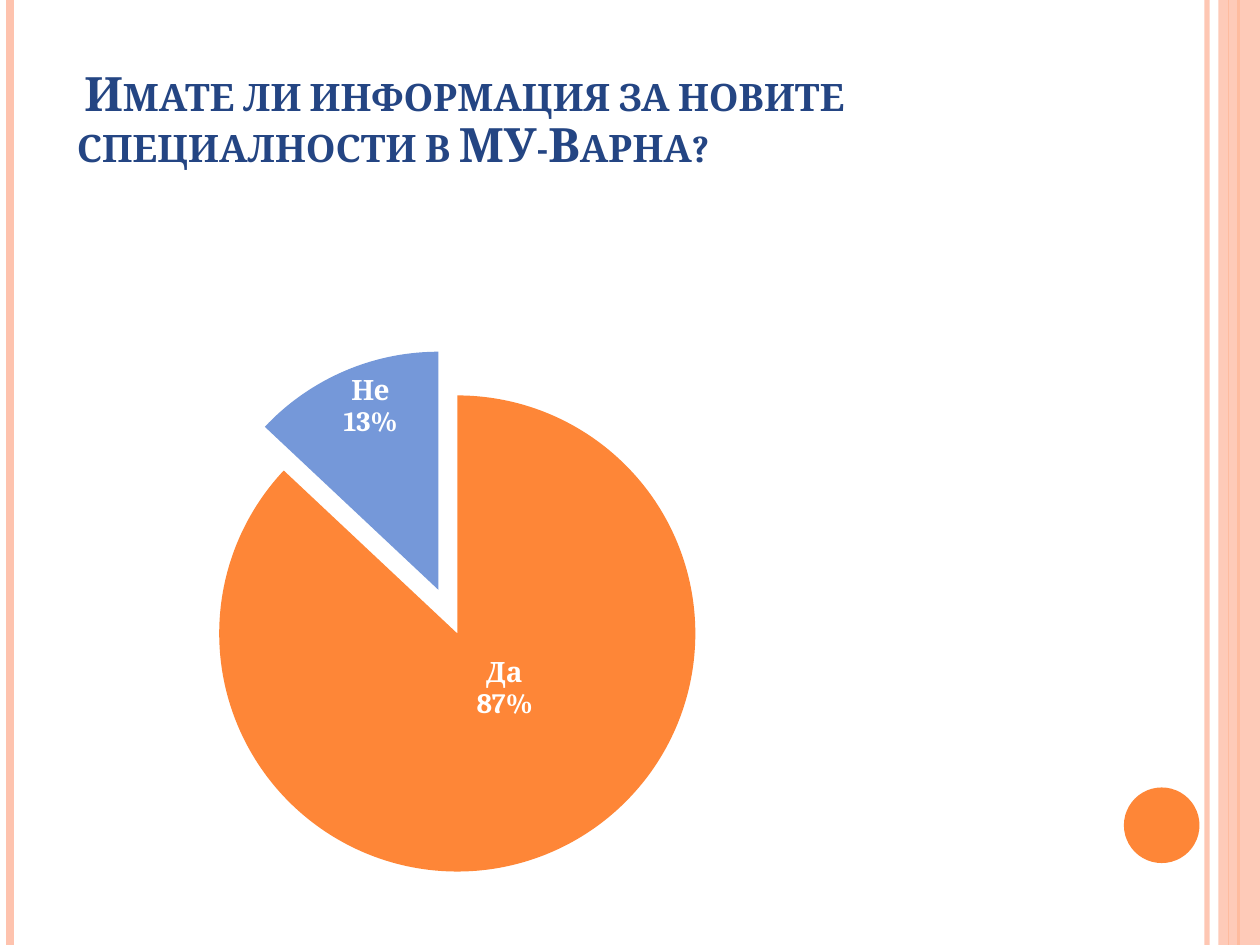
from lxml.etree import SubElement
from pptx import Presentation
from pptx.chart.data import CategoryChartData
from pptx.dml.color import RGBColor
from pptx.enum.chart import XL_CHART_TYPE, XL_LABEL_POSITION
from pptx.enum.shapes import MSO_CONNECTOR, MSO_SHAPE
from pptx.enum.text import MSO_ANCHOR, PP_ALIGN
from pptx.oxml import parse_xml
from pptx.oxml.ns import nsdecls, qn
from pptx.util import Inches, Pt

WIDTH, HEIGHT = 10, 7.5
FONT = "Cambria"
ORANGE, PEACH, BLUE, NAVY, WHITE = "FE8637", "FEC3AE", "7598D9", "244583", "FFFFFF"
TITLE = "Имате ли информация за новите специалности в МУ-Варна?"
ANSWERS = [
    {"name": "Да", "percent": 87, "color": ORANGE, "label_shift": (0, -0.08)},
    {"name": "Не", "percent": 13, "color": BLUE, "label_shift": (-0.02, -0.11)},
]
STRIPES = [
    (9.58, PEACH, 3, 93),
    (0.08, PEACH, 4.5, 100),
    (9.83, ORANGE, 1.5, 100),
    (9.75, ORANGE, 0.75, 100),
]
PANELS = [
    (MSO_SHAPE.RECTANGLE, (9.67, 0, 0.33, HEIGHT), PEACH, 87),
    (MSO_SHAPE.OVAL, (8.92, 6.25, 0.6, 0.6), ORANGE, 100),
]
TITLE_BOX = (0.51, 0.68, 8.17, 1.19)
CHART_BOX = (-0.53, 2.19, 8.17, 5.33)
PIE_SPAN = 4.14


def rgb(color):
    return RGBColor.from_string(color)


def inches(box):
    return [Inches(length) for length in box]


def fill_solid(fill, color, opacity=100):
    fill.solid()
    fill.fore_color.rgb = rgb(color)
    if opacity < 100:
        element = fill._xPr.find(qn("a:solidFill"))[0]
        SubElement(element, qn("a:alpha"), val=str(opacity * 1000))


def add_stripe(slide, x, color, weight, opacity):
    line = slide.shapes.add_connector(
        MSO_CONNECTOR.STRAIGHT, *inches((x, 0, x, HEIGHT)))
    fill_solid(line.line.fill, color, opacity)
    line.line.width = Pt(weight)
    SubElement(line._element.spPr, qn("a:effectLst"))


def add_panel(slide, kind, box, color, opacity):
    shape = slide.shapes.add_shape(kind, *inches(box))
    shape.shadow.inherit = False
    shape.line.fill.background()
    fill_solid(shape.fill, color, opacity)


def fill_title(title):
    title.left, title.top, title.width, title.height = inches(TITLE_BOX)
    frame = title.text_frame
    frame.word_wrap = True
    frame.vertical_anchor = MSO_ANCHOR.BOTTOM
    frame.margin_bottom = Inches(0.5)
    paragraph = frame.paragraphs[0]
    paragraph.alignment = PP_ALIGN.LEFT
    paragraph.line_spacing = 0.9
    paragraph._p.get_or_add_pPr().set("indent", str(Inches(0.06)))
    run = paragraph.add_run()
    run.text = TITLE
    run.font.name, run.font.size, run.font.bold = FONT, Pt(27), True
    run.font.color.rgb = rgb(NAVY)
    run._r.get_or_add_rPr().set("cap", "small")


def manual_layout(**settings):
    parts = "".join(f'<c:{key} val="{value}"/>' for key, value in settings.items())
    return parse_xml(f'<c:layout {nsdecls("c")}><c:manualLayout>{parts}'
                     "</c:manualLayout></c:layout>")


def style_point(point, answer):
    fill_solid(point.format.fill, answer["color"])
    label = point.data_label
    label.font.name, label.font.size, label.font.bold = FONT, Pt(16), True
    label.font.color.rgb = rgb(WHITE)
    label.position = XL_LABEL_POSITION.CENTER
    element = label._dLbl
    for tag, shown in (("showVal", 0), ("showCatName", 1), ("showPercent", 1)):
        element.find(qn(f"c:{tag}")).set("val", str(shown))
    SubElement(element, qn("c:separator")).text = "\n"
    x, y = answer["label_shift"]
    element.find(qn("c:idx")).addnext(manual_layout(x=x, y=y))


def add_pie(slide):
    data = CategoryChartData()
    data.categories = [answer["name"] for answer in ANSWERS]
    data.add_series("Series 1", [answer["percent"] for answer in ANSWERS])
    chart = slide.shapes.add_chart(
        XL_CHART_TYPE.PIE, *inches(CHART_BOX), data).chart
    chart.has_legend = chart.has_title = False
    chart.font.name, chart.font.size = FONT, Pt(10)
    plot = chart.plots[0]
    plot.vary_by_categories = True
    series = plot.series[0]
    for index, answer in enumerate(ANSWERS):
        style_point(series.points[index], answer)
    explosion = parse_xml(f'<c:explosion {nsdecls("c")} val="10"/>')
    series._element.find(qn("c:dPt")).addprevious(explosion)
    share_x, share_y = (round(PIE_SPAN / side, 2) for side in CHART_BOX[2:])
    area = chart._chartSpace.chart.plotArea
    for old in area.findall(qn("c:layout")):
        area.remove(old)
    area.insert(0, manual_layout(
        layoutTarget="inner", xMode="edge", yMode="edge",
        x=(1 - share_x) / 2, y=(1 - share_y) / 2, w=share_x, h=share_y))


def main():
    presentation = Presentation()
    presentation.slide_width, presentation.slide_height = inches((WIDTH, HEIGHT))
    slide = presentation.slides.add_slide(presentation.slide_layouts[5])
    for stripe in STRIPES:
        add_stripe(slide, *stripe)
    for panel in PANELS:
        add_panel(slide, *panel)
    fill_title(slide.shapes.title)
    add_pie(slide)
    presentation.save("out.pptx")


if __name__ == "__main__":
    main()
